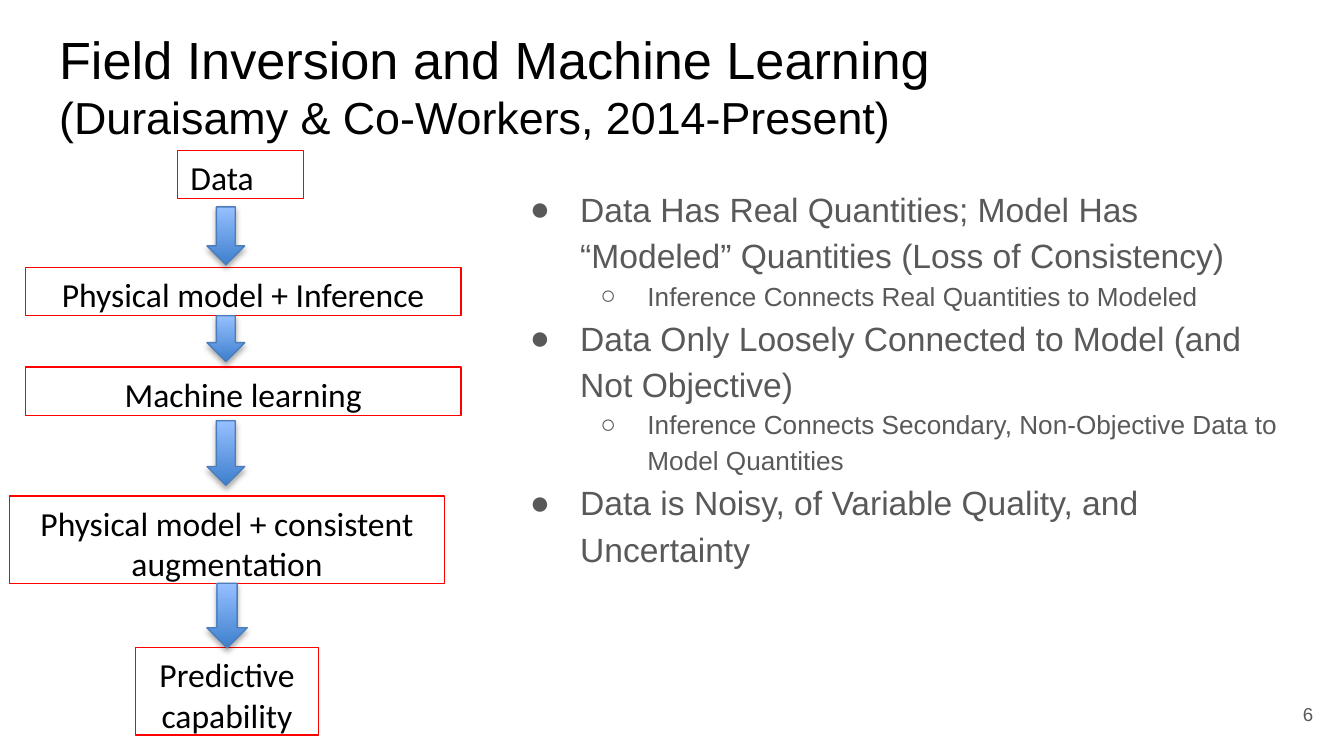
from lxml import etree
from pptx import Presentation
from pptx import util as u
from pptx.dml.color import RGBColor
from pptx.enum import shapes, text
from pptx.oxml import parse_xml
from pptx.oxml.ns import nsdecls, qn

Pt = u.Pt
LEFT, CENTER, RIGHT = text.PP_ALIGN.LEFT, text.PP_ALIGN.CENTER, text.PP_ALIGN.RIGHT
TOP, MIDDLE = text.MSO_ANCHOR.TOP, text.MSO_ANCHOR.MIDDLE

THEME = {
    "black": RGBColor.from_string("000000"),
    "gray": RGBColor.from_string("595959"),
    "box_line": RGBColor.from_string("FF0000"),
    "arrow_line": RGBColor.from_string("4A7DBA"),
    "arrow_fill": [RGBColor.from_string(c) for c in ("3E7FCD", "96C0FF")],
    "font": "Arial", "flow_font": "Calibri",
    "title": 28, "subtitle": 24, "body": 18, "sub": 14, "flow": 18, "number": 10,
}


def set_frame(tf, anchor, inset_y):
    frame_format = {
        "word_wrap": True, "auto_size": text.MSO_AUTO_SIZE.NONE,
        "vertical_anchor": anchor,
        "margin_left": Pt(7.2), "margin_right": Pt(7.2),
        "margin_top": Pt(inset_y), "margin_bottom": Pt(inset_y),
    }
    for name, value in frame_format.items():
        setattr(tf, name, value)


def write(p, words, size, color, font=THEME["font"], align=LEFT):
    p.alignment = align
    r = p.add_run()
    r.text = words
    for name, value in {"size": Pt(size), "name": font}.items():
        setattr(r.font, name, value)
    r.font.color.rgb = color


prs = Presentation()
prs.slide_width, prs.slide_height = Pt(720), Pt(405)
s = prs.slides.add_slide(prs.slide_layouts[5])

# Title
title = s.shapes.title
for name, value in zip(("left", "top", "width", "height"), (24.5, 7.2, 671, 76.3)):
    setattr(title, name, Pt(value))
tf = title.text_frame
set_frame(tf, TOP, 7.2)
write(tf.paragraphs[0], "Field Inversion and Machine Learning", THEME["title"], THEME["black"])
write(tf.add_paragraph(), "(Duraisamy & Co-Workers, 2014-Present)", THEME["subtitle"], THEME["black"])

# Bulleted list: level, words
points = [
    (0, "Data Has Real Quantities; Model Has “Modeled” Quantities (Loss of Consistency)"),
    (1, "Inference Connects Real Quantities to Modeled"),
    (0, "Data Only Loosely Connected to Model (and Not Objective)"),
    (1, "Inference Connects Secondary, Non-Objective Data to Model Quantities"),
    (0, "Data is Noisy, of Variable Quality, and Uncertainty"),
]
levels = [("●", 27, THEME["body"]), ("○", 25.2, THEME["sub"])]
tf = s.shapes.add_textbox(Pt(267.8), Pt(90.7), Pt(427.7), Pt(269.3)).text_frame
set_frame(tf, TOP, 7.2)
for i, (level, words) in enumerate(points):
    mark, hang, size = levels[level]
    p = tf.add_paragraph() if i else tf.paragraphs[0]
    p.level = level
    pPr = p._p.get_or_add_pPr()
    pPr.set("marL", str(Pt(36 * (level + 1))))
    pPr.set("indent", str(-Pt(hang)))
    bullet_color = etree.SubElement(pPr, qn("a:buClr"))
    etree.SubElement(bullet_color, qn("a:srgbClr"), val=str(THEME["gray"]))
    etree.SubElement(pPr, qn("a:buFont"), typeface=THEME["font"])
    etree.SubElement(pPr, qn("a:buChar"), char=mark)
    p.line_spacing = 1.15
    write(p, words, size, THEME["gray"])

# Slide number
tf = s.shapes.add_textbox(Pt(667.4), Pt(367.2), Pt(43.2), Pt(31)).text_frame
set_frame(tf, MIDDLE, 7.2)
write(tf.paragraphs[0], "6", THEME["number"], THEME["gray"], align=RIGHT)

# Flow boxes: words, left, top, width, height, alignment
ONE_LINE, TWO_LINES, WIDE = 25.9, 46.8, 233.3
boxes = [
    ("Data", 95, 80.6, 67.7, ONE_LINE, LEFT),
    ("Physical model + Inference", 13.7, 143.3, WIDE, ONE_LINE, CENTER),
    ("Machine learning", 13.7, 196.6, WIDE, ONE_LINE, CENTER),
    ("Physical model + consistent augmentation", 5, 265.7, WIDE, TWO_LINES, CENTER),
    ("Predictive capability", 72.7, 347, 97.9, TWO_LINES, CENTER),
]
for words, *place, align in boxes:
    sp = s.shapes.add_shape(shapes.MSO_SHAPE.RECTANGLE, *map(Pt, place))
    sp.shadow.inherit = False
    sp.fill.background()
    sp.line.color.rgb = THEME["box_line"]
    sp.line.width = Pt(0.75)
    set_frame(sp.text_frame, TOP, 3.6)
    write(sp.text_frame.paragraphs[0], words, THEME["flow"], THEME["black"],
          THEME["flow_font"], align)

# Flow arrows: top, width, height
arrows = [(110.9, 20.2, 31), (169.2, 20.2, 24.5), (225.4, 20.2, 34.6), (312.5, 21.6, 34.6)]
for top, width, height in arrows:
    sp = s.shapes.add_shape(shapes.MSO_SHAPE.DOWN_ARROW, Pt(110.9), Pt(top), Pt(width), Pt(height))
    sp.fill.gradient()
    sp.fill.gradient_angle = 90
    for stop, color in zip(sp.fill.gradient_stops, THEME["arrow_fill"]):
        stop.color.rgb = color
    sp.line.color.rgb = THEME["arrow_line"]
    sp.line.width = Pt(0.75)
    sp.shadow.inherit = False
    sp._element.spPr.find(qn("a:effectLst")).append(parse_xml(
        f'<a:outerShdw {nsdecls("a")} blurRad="{Pt(3.1)}" dist="{Pt(1.8)}" dir="5400000" '
        'rotWithShape="0"><a:srgbClr val="000000"><a:alpha val="35000"/></a:srgbClr></a:outerShdw>'))

prs.save("out.pptx")
